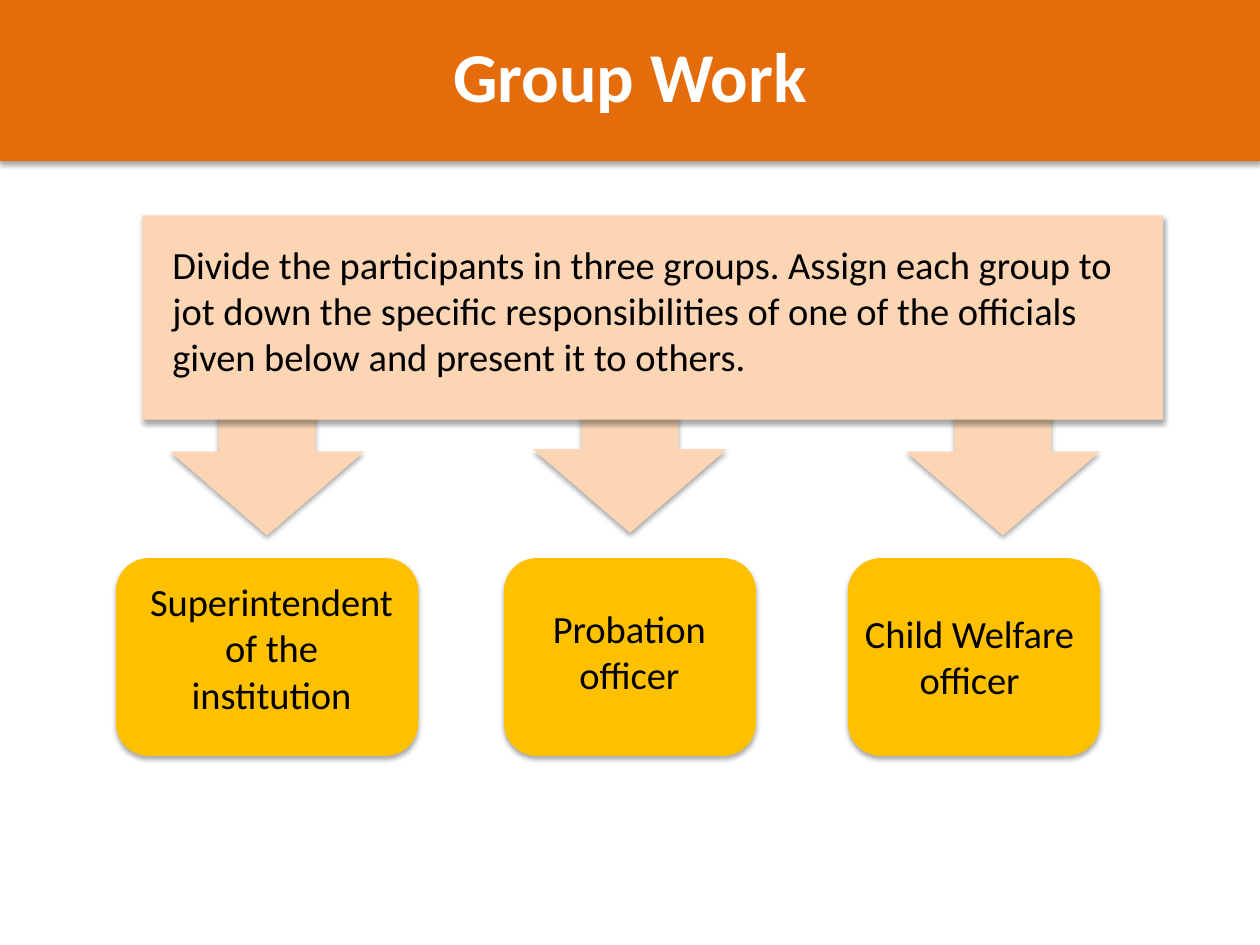
"""Build the group work slide on a grid of 100 columns by 75 rows."""
import pptx
import pptx.dml.color
import pptx.enum.shapes
import pptx.enum.text
import pptx.oxml
import pptx.oxml.ns
import pptx.util

RGBColor = pptx.dml.color.RGBColor
Shape = pptx.enum.shapes.MSO_SHAPE
Align = pptx.enum.text.PP_ALIGN
Anchor = pptx.enum.text.MSO_ANCHOR
AutoSize = pptx.enum.text.MSO_AUTO_SIZE

ORANGE = RGBColor(0xE4, 0x6C, 0x0A)
PEACH = RGBColor(0xFC, 0xD5, 0xB5)
AMBER = RGBColor(0xFF, 0xC0, 0x00)
WHITE = RGBColor(0xFF, 0xFF, 0xFF)
BLACK = RGBColor(0x00, 0x00, 0x00)

WIDTH, HEIGHT = pptx.util.Inches(10), pptx.util.Inches(7.5)
COLUMNS, ROWS = 100, 75

TITLE_FONT = {"name": "Calibri", "size": pptx.util.Pt(40), "bold": True}
BODY_FONT = {"name": "Calibri", "size": pptx.util.Pt(22), "bold": False}
FRAME_FORMAT = {
    "word_wrap": True,
    "auto_size": AutoSize.SHAPE_TO_FIT_TEXT,
    "vertical_anchor": Anchor.TOP,
}
SHADOW = (
    '<a:outerShdw %s blurRad="39370" dist="22860" dir="5400000" rotWithShape="0">'
    '<a:srgbClr val="000000"><a:alpha val="35000"/></a:srgbClr></a:outerShdw>'
    % pptx.oxml.ns.nsdecls("a")
)

INSTRUCTION = (
    "Divide the participants in three groups. Assign each group to jot down "
    "the specific responsibilities of one of the officials given below and "
    "present it to others."
)
ARROWS = [(13.5, 29.2), (42.3, 29), (71.9, 29.2)]
CARDS = [(9.2, 24), (40, 20), (67.3, 20)]
LABELS = [
    ("Superintendent of the institution", (10.5, 45.4, 22.1, 12.1)),
    ("Probation officer", (40.6, 47.5, 18.7, 8.4)),
    ("Child Welfare officer", (67.6, 47.9, 18.7, 8.4)),
]


def place(column, row, columns, rows):
    """Turn grid units into left, top, width and height."""
    return (
        int(WIDTH * column / COLUMNS),
        int(HEIGHT * row / ROWS),
        int(WIDTH * columns / COLUMNS),
        int(HEIGHT * rows / ROWS),
    )


def set_all(target, values):
    """Set every attribute named in a dict of format values."""
    for name, value in values.items():
        setattr(target, name, value)


def add_block(page, kind, area, color):
    """Add a filled preset shape with a soft shadow and no outline."""
    block = page.shapes.add_shape(kind, *place(*area))
    block.fill.solid()
    block.fill.fore_color.rgb = color
    block.line.fill.background()
    block.shadow.inherit = False
    effects = block.element.spPr.find(pptx.oxml.ns.qn("a:effectLst"))
    effects.append(pptx.oxml.parse_xml(SHADOW))
    return block


def write(box, area, text, font, color, align):
    """Place a text holder and fill it with one formatted paragraph."""
    set_all(box, dict(zip(("left", "top", "width", "height"), place(*area))))
    set_all(box.text_frame, FRAME_FORMAT)
    para = box.text_frame.paragraphs[0]
    para.alignment = align
    span = para.add_run()
    span.text = text
    set_all(span.font, font)
    span.font.color.rgb = color


def add_text(page, area, text, align):
    """Add a body text box."""
    box = page.shapes.add_textbox(*place(*area))
    write(box, area, text, BODY_FONT, BLACK, align)


def add_title(page, text):
    """Add the banner and set the title on top of it."""
    banner = add_block(page, Shape.RECTANGLE, (0, 0, COLUMNS, 12.8), ORANGE)
    title = page.shapes.title
    banner.element.addnext(title.element)
    write(title, (0, 2.1, COLUMNS, 7.7), text, TITLE_FONT, WHITE, Align.CENTER)


def main():
    """Build and save the deck."""
    deck = pptx.Presentation()
    deck.slide_width, deck.slide_height = WIDTH, HEIGHT
    page = deck.slides.add_slide(deck.slide_layouts[5])
    add_title(page, "Group Work")
    for column, row in ARROWS:
        add_block(page, Shape.DOWN_ARROW, (column, row, 15.4, 13.3), PEACH)
    add_block(page, Shape.RECTANGLE, (11.3, 17.1, 81, 16.2), PEACH)
    add_text(page, (12.7, 18.6, 79.5, 12.1), INSTRUCTION, Align.LEFT)
    for column, columns in CARDS:
        area = (column, 44.3, columns, 15.7)
        add_block(page, Shape.ROUNDED_RECTANGLE, area, AMBER)
    for text, area in LABELS:
        add_text(page, area, text, Align.CENTER)
    deck.save("out.pptx")


if __name__ == "__main__":
    main()
